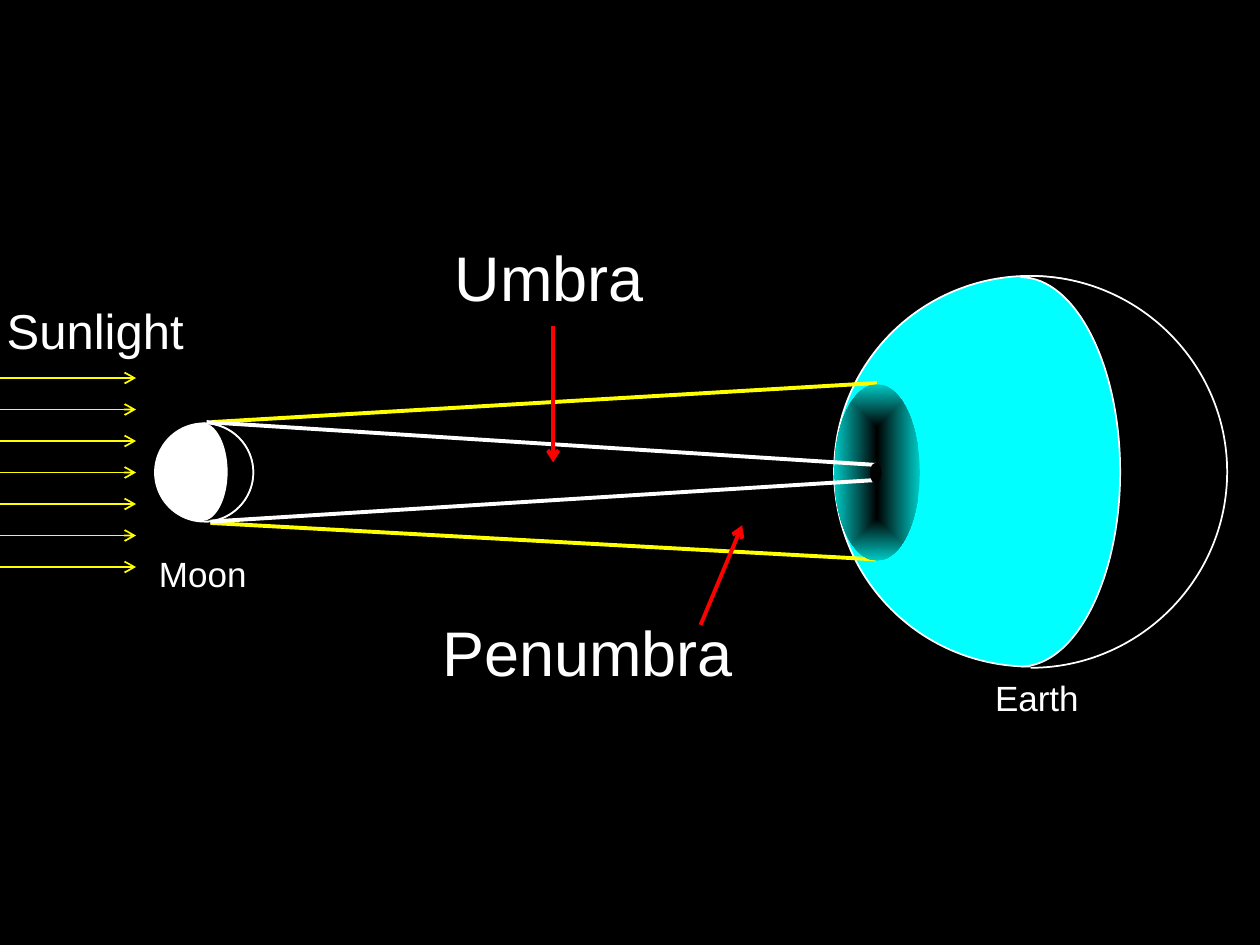
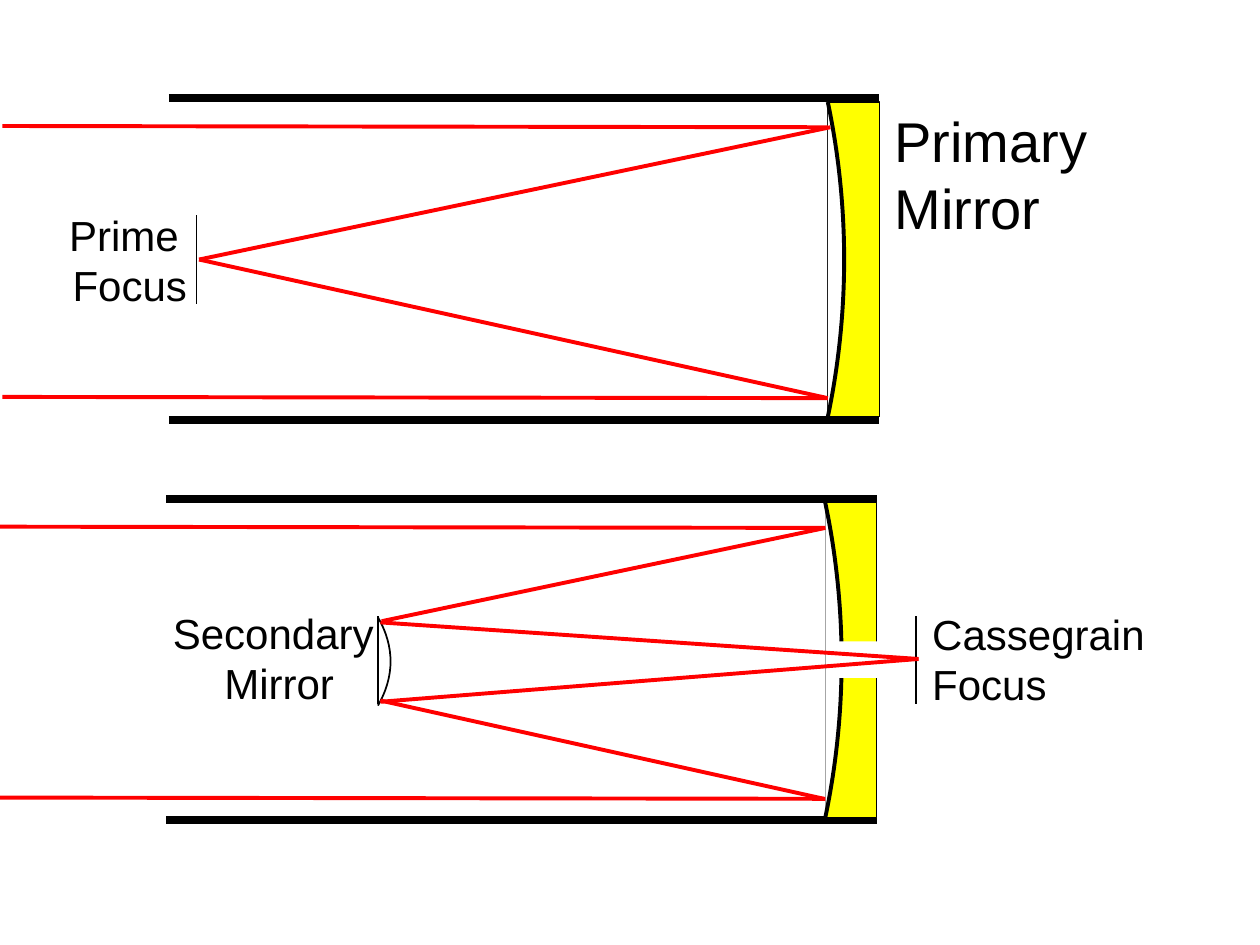
"""Two astronomy diagrams: a solar eclipse, and prime and Cassegrain telescope foci."""
from lxml.etree import SubElement
from pptx import Presentation
from pptx.dml.color import RGBColor
from pptx.enum.shapes import MSO_CONNECTOR as LINK, MSO_SHAPE as SHAPE
from pptx.enum.text import MSO_ANCHOR as ANCHOR, MSO_AUTO_SIZE as FIT, PP_ALIGN as ALIGN
from pptx.oxml.ns import qn
from pptx.util import Inches, Pt

COLUMNS, ROWS = 10, 7.5
CELL = Inches(1)
BLACK, WHITE, RED, YELLOW, CYAN = "000000", "FFFFFF", "FF0000", "FFFF00", "00FFFF"
UPPER_HALVES = {
    "half ellipse": [(0, -1), (0.55, -1), (1, -0.55)],
    "parabola": [(0, -1), (0.67, -0.67), (1, -0.33)],
}
color = RGBColor.from_string


def draw(page, kind, place, fill=None, stroke=None, width=1, arrow=False):
    """Draw a line between two points, or a curve or preset shape in a box."""
    left, top, across, down = [round(value * CELL) for value in place]
    if kind == "line":
        shape = page.shapes.add_connector(LINK.STRAIGHT, left, top, across, down)
        SubElement(shape._element.spPr, qn("a:effectLst"))
    elif kind in UPPER_HALVES:
        upper = UPPER_HALVES[kind]
        knots = upper + [(1, 0)] + [(x, -y) for x, y in reversed(upper)]
        points = [(round(left + across * x), round(top + down * (1 + y) / 2)) for x, y in knots]
        outline = page.shapes.build_freeform(*points[0])
        outline.add_line_segments(points[1:], close=False)
        shape = outline.convert_to_shape()
        segments = list(shape._element.iter(qn("a:lnTo")))
        track = segments[0].getparent()
        for first in range(0, len(segments), 3):
            bend = SubElement(track, qn("a:cubicBezTo"))
            for segment in segments[first:first + 3]:
                bend.append(segment[0])
                track.remove(segment)
    else:
        shape = page.shapes.add_shape(kind, left, top, across, down)
    if kind != "line":
        shape.shadow.inherit = False
        if fill:
            shape.fill.solid()
            shape.fill.fore_color.rgb = color(fill)
        else:
            shape.fill.background()
    if stroke:
        shape.line.color.rgb = color(stroke)
        shape.line.width = Pt(width)
    else:
        shape.line.fill.background()
    if arrow:
        SubElement(shape.line._get_or_add_ln(), qn("a:tailEnd"), type="arrow")
    return shape


def label(page, lines, place, size, ink, align=ALIGN.CENTER):
    """Write one paragraph for each line of text."""
    box = page.shapes.add_textbox(*[round(value * CELL) for value in place])
    frame = box.text_frame
    layout = {"word_wrap": False, "auto_size": FIT.SHAPE_TO_FIT_TEXT,
              "vertical_anchor": ANCHOR.MIDDLE}
    for name, value in layout.items():
        setattr(frame, name, value)
    for index, text in enumerate(lines):
        para = frame.add_paragraph() if index else frame.paragraphs[0]
        para.alignment = align
        span = para.add_run()
        span.text = text
        for name, value in {"name": "Arial", "size": Pt(size)}.items():
            setattr(span.font, name, value)
        span.font.color.rgb = color(ink)


deck = Presentation()
deck.slide_width, deck.slide_height = COLUMNS * CELL, round(ROWS * CELL)
eclipse, telescopes = [deck.slides.add_slide(deck.slide_layouts[6]) for _ in range(2)]
for page, ground in ((eclipse, BLACK), (telescopes, WHITE)):
    page.background.fill.solid()
    page.background.fill.fore_color.rgb = color(ground)

for globe, night, day, tint in (
    ((6.62, 2.19, 3.1, 3.1), (8.18, 2.19, 1.56, 3.11), (8.1, 2.2, 0.79, 3.09), CYAN),
    ((1.23, 3.36, 0.78, 0.78), (1.62, 3.36, 0.39, 0.78), (1.6, 3.36, 0.2, 0.77), WHITE),
):
    draw(eclipse, SHAPE.OVAL, globe, tint, WHITE)
    draw(eclipse, "half ellipse", night, BLACK, WHITE)
    draw(eclipse, "half ellipse", day, tint, WHITE)

for ray in range(7):
    height = 3 + ray / 4
    draw(eclipse, "line", (0, height, 1.08, height), stroke=YELLOW, arrow=True)
for edge in ((1.68, 3.35, 6.96, 3.04), (1.67, 4.15, 6.95, 4.44)):
    draw(eclipse, "line", edge, stroke=YELLOW, width=2.25)

penumbra = draw(eclipse, SHAPE.OVAL, (6.62, 3.05, 0.68, 1.4))
penumbra.fill.gradient()
for stop, tint in zip(penumbra.fill.gradient_stops, (BLACK, "00CAC5")):
    stop.color.rgb = color(tint)
gradient = penumbra._element.spPr.find(qn("a:gradFill"))
gradient.remove(gradient.find(qn("a:lin")))
focus = SubElement(SubElement(gradient, qn("a:path"), path="shape"), qn("a:fillToRect"))
for side in "ltrb":
    focus.set(side, "50000")

for edge in ((1.64, 3.35, 6.95, 3.69), (1.67, 4.14, 6.95, 3.81)):
    draw(eclipse, "line", edge, stroke=WHITE, width=2.25)
draw(eclipse, SHAPE.OVAL, (6.92, 3.69, 0.06, 0.13), BLACK, BLACK, 2.25)
for pointer in ((4.39, 2.59, 4.39, 3.67), (5.56, 4.96, 5.89, 4.17)):
    draw(eclipse, "line", pointer, stroke=RED, width=2.25, arrow=True)
for text, place, size in (
    ("Sunlight", (-0.05, 2.33, 1.61, 0.57), 28),
    ("Umbra", (3.51, 1.84, 1.7, 0.7), 36),
    ("Penumbra", (3.41, 4.82, 2.51, 0.7), 36),
    ("Moon", (1.16, 4.34, 0.9, 0.43), 20),
    ("Earth", (7.78, 5.32, 0.9, 0.43), 20),
):
    label(eclipse, [text], place, size, WHITE)

for left, top in ((1.34, 0.78), (1.32, 3.96)):
    for wall in (top, top + 2.55):
        draw(telescopes, "line", (left, wall, left + 5.64, wall), stroke=BLACK, width=4.5)
    mirror = left + 5.23
    draw(telescopes, SHAPE.RECTANGLE, (mirror, top + 0.03, 0.41, 2.5), YELLOW, BLACK, 0.63)
    draw(telescopes, "parabola", (mirror, top + 0.03, 0.13, 2.5), WHITE, BLACK, 2.25)
    for ray in (top + 0.22, top + 2.37):
        draw(telescopes, "line", (left - 1.32, ray, mirror, ray + 0.01),
             stroke=RED, width=2.25)

draw(telescopes, SHAPE.RECTANGLE, (6.56, 5.09, 0.41, 0.29), WHITE)
draw(telescopes, "parabola", (3, 4.9, 0.1, 0.7), stroke=BLACK)
for x, top in ((1.56, 1.71), (3, 4.89), (7.27, 4.89)):
    draw(telescopes, "line", (x, top, x, top + 0.7), stroke=BLACK)
for ray in (
    (6.57, 3.16, 1.58, 2.06), (1.58, 2.06, 6.59, 1.01),
    (6.54, 6.34, 3.02, 5.56), (3.03, 4.93, 6.55, 4.19),
    (3.02, 4.94, 7.29, 5.23), (3.02, 5.57, 7.29, 5.23),
):
    draw(telescopes, "line", ray, stroke=RED, width=2.25)
for lines, place, size, align in (
    (("Primary", "Mirror"), (7, 0.79, 1.73, 1.17), 32, ALIGN.LEFT),
    (("Prime ", "Focus"), (0.45, 1.61, 1.16, 0.9), 24, ALIGN.CENTER),
    (("Secondary ", "Mirror"), (1.27, 4.77, 1.89, 0.9), 24, ALIGN.CENTER),
    (("Cassegrain", "Focus"), (7.3, 4.78, 1.98, 0.9), 24, ALIGN.LEFT),
):
    label(telescopes, lines, place, size, BLACK, align)

deck.save("out.pptx")
